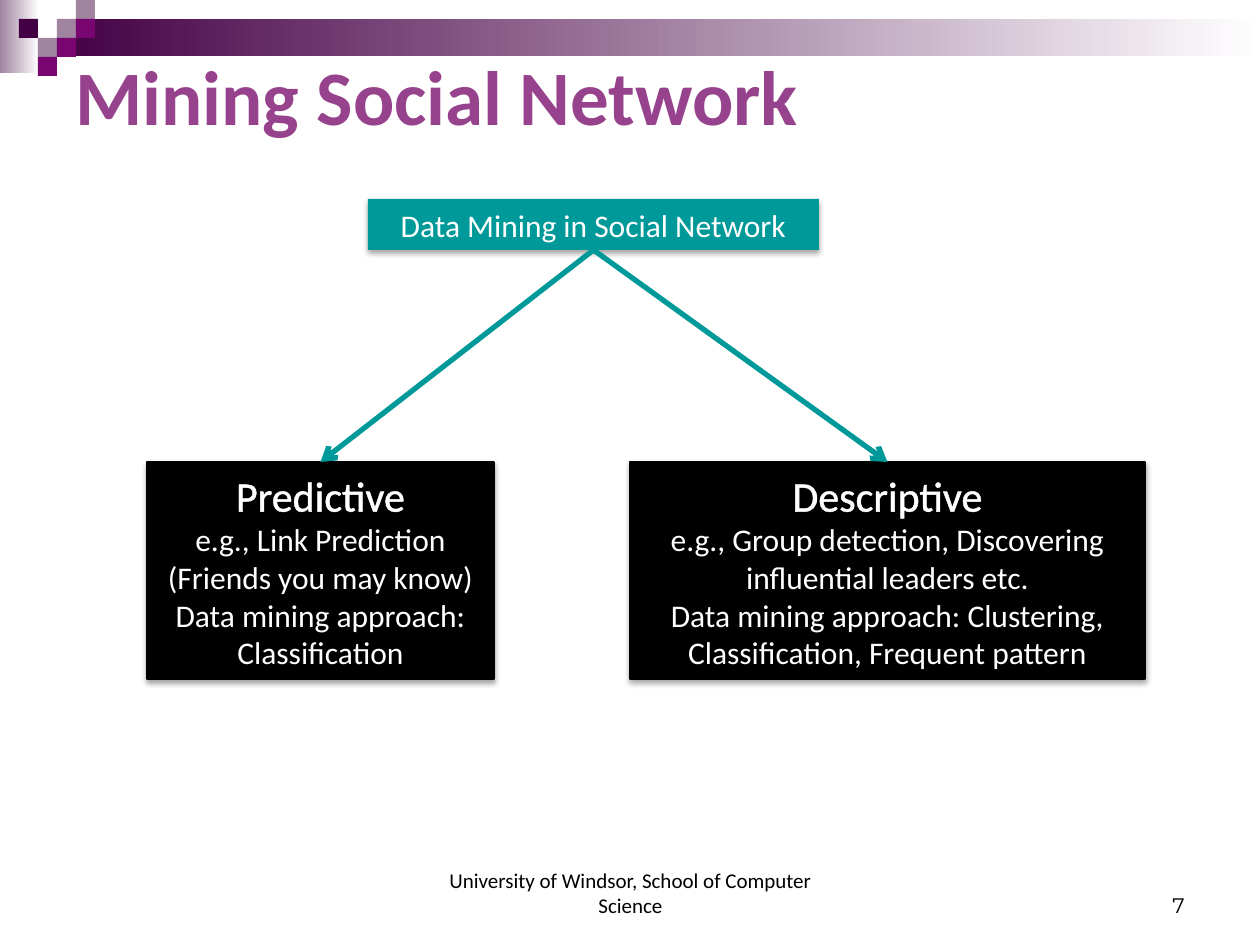
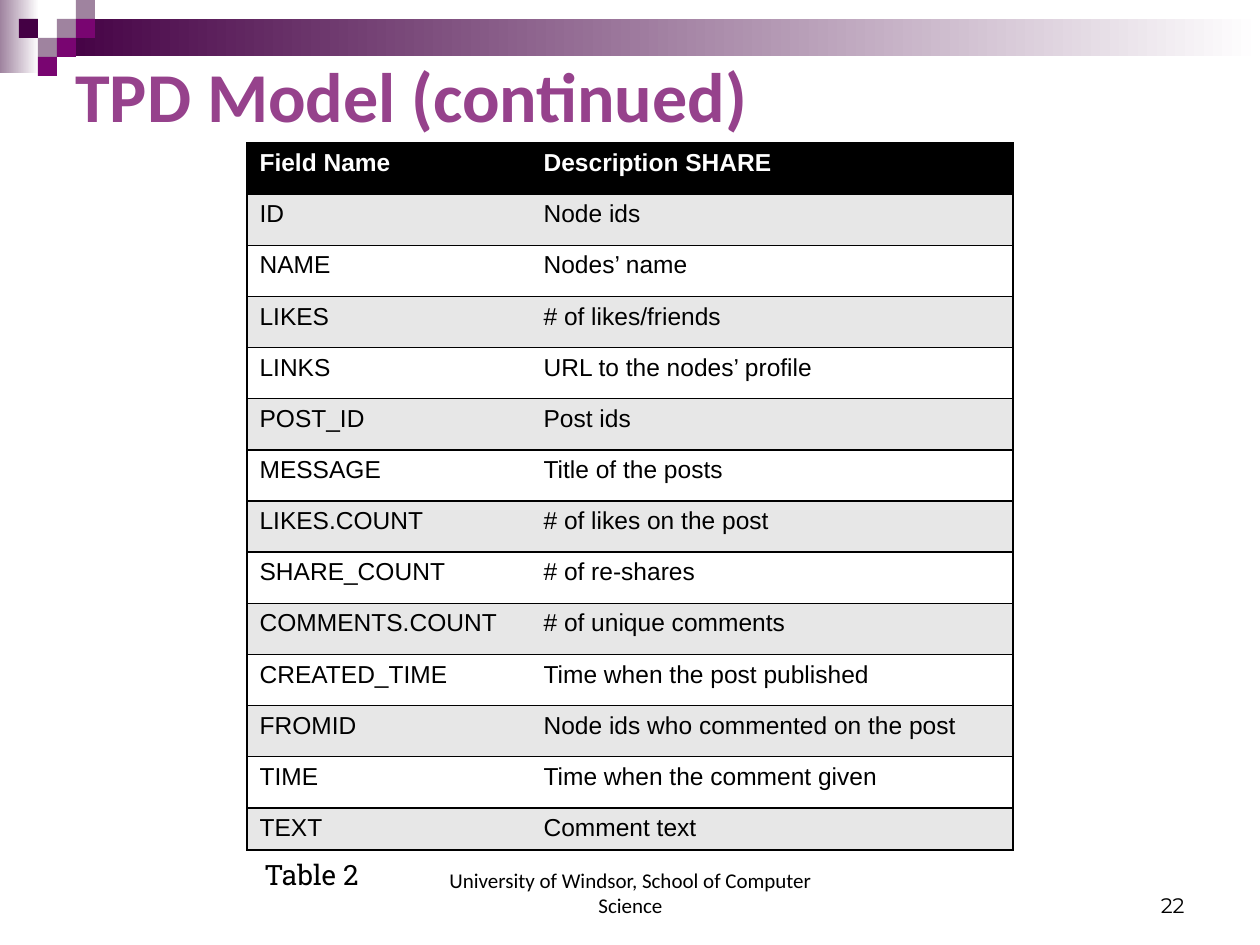
from lxml import etree
from pptx import Presentation
from pptx import util as u
from pptx.dml.color import RGBColor
from pptx.enum import shapes, text
from pptx.oxml import ns

BLACK = RGBColor(0x00, 0x00, 0x00)
WHITE = RGBColor(0xFF, 0xFF, 0xFF)
TEAL = RGBColor(0x00, 0x99, 0x99)
TITLE_PURPLE = RGBColor(0x96, 0x42, 0x8C)
DARK_PURPLE = RGBColor(0x44, 0x00, 0x44)
PURPLE = RGBColor(0x79, 0x05, 0x71)
MAUVE = RGBColor(0x9F, 0x83, 0x9F)
BAND_GREY = RGBColor(0xE7, 0xE7, 0xE7)

BODY_FONT = "Calibri"
TABLE_FONT = "Arial"
NUMBER_FONT = "Montserrat"
CAPTION_FONT = "Roboto Slab"
FOOTER = "University of Windsor, School of Computer Science"
ALIGN = text.PP_ALIGN
ANCHOR = text.MSO_ANCHOR

TILE = 19
TILES = [(3, 1, MAUVE), (4, 0, MAUVE), (4, 1, PURPLE), (2, 2, MAUVE),
         (1, 1, DARK_PURPLE), (3, 2, PURPLE), (2, 3, PURPLE)]

FIELDS = [
    ("Field Name", "Description SHARE"),
    ("ID", "Node ids"),
    ("NAME", "Nodes’ name"),
    ("LIKES", "# of likes/friends"),
    ("LINKS", "URL to the nodes’ profile"),
    ("POST_ID", "Post ids"),
    ("MESSAGE", "Title of the posts"),
    ("LIKES.COUNT", "# of likes on the post"),
    ("SHARE_COUNT", "# of re-shares"),
    ("COMMENTS.COUNT", "# of unique comments"),
    ("CREATED_TIME", "Time when the post published"),
    ("FROMID", "Node ids who commented on the post"),
    ("TIME", "Time when the comment given"),
    ("TEXT", "Comment text"),
]


def px(length):
    return u.Emu(round(length * 914400 / 126))


def add_xml(parent, tag, **attributes):
    return etree.SubElement(parent, ns.qn(tag), attributes)


def add_solid(parent, color):
    fill = add_xml(parent, "a:solidFill")
    return add_xml(fill, "a:srgbClr", val=str(color))


def add_span(para, words, size, color, font=BODY_FONT, bold=False):
    span = para.add_run()
    span.text = words
    span.font.size = u.Pt(size)
    span.font.name = font
    span.font.bold = bold
    span.font.color.rgb = color
    return span


def add_label(page, area, words, size, color=BLACK, font=BODY_FONT, bold=False,
              align=ALIGN.LEFT, anchor=ANCHOR.TOP, wrap=True):
    frame = page.shapes.add_textbox(*map(px, area)).text_frame
    frame.word_wrap = wrap
    frame.vertical_anchor = anchor
    para = frame.paragraphs[0]
    para.alignment = align
    add_span(para, words, size, color, font, bold)


def add_rect(page, area, color, fade=False):
    rect = page.shapes.add_shape(shapes.MSO_SHAPE.RECTANGLE, *map(px, area))
    rect.shadow.inherit = False
    rect.line.fill.background()
    if fade:
        rect.fill.gradient()
        rect.fill.gradient_angle = 0
        for stop, shade in zip(rect.fill.gradient_stops, (color, WHITE)):
            stop.color.rgb = shade
    else:
        rect.fill.solid()
        rect.fill.fore_color.rgb = color
    return rect


def add_page(deck, title, title_size, number):
    page = deck.slides.add_slide(deck.slide_layouts[6])
    add_rect(page, (0, 0, 39, 73), MAUVE, fade=True)
    add_rect(page, (57, 19, 1203, 37), DARK_PURPLE, fade=True)
    for column, row, color in TILES:
        add_rect(page, (column * TILE, row * TILE, TILE, TILE), color)
    add_label(page, (63, 0, 1134, 189), title, title_size, TITLE_PURPLE,
              bold=True, anchor=ANCHOR.MIDDLE)
    add_label(page, (431, 861, 399, 63), FOOTER, 12,
              align=ALIGN.CENTER, anchor=ANCHOR.BOTTOM)
    add_label(page, (903, 861, 294, 63), number, 12, font=NUMBER_FONT,
              align=ALIGN.RIGHT, anchor=ANCHOR.BOTTOM)
    return page


def add_soft_shadow(box):
    effects = box._element.spPr.find(ns.qn("a:effectLst"))
    shadow = add_xml(effects, "a:outerShdw", blurRad="40000", dist="23000",
                     dir="5400000", rotWithShape="0")
    add_xml(add_solid_color(shadow, BLACK), "a:alpha", val="35000")


def add_solid_color(parent, color):
    return add_xml(parent, "a:srgbClr", val=str(color))


def outline_span(span, color):
    line = etree.Element(ns.qn("a:ln"), w="18415")
    add_solid(line, color)
    span.font._element.insert(0, line)


def add_box(page, area, color, lines, heading=None):
    box = add_rect(page, area, color)
    add_soft_shadow(box)
    frame = box.text_frame
    frame.word_wrap = True
    para = frame.paragraphs[0]
    if heading:
        box.line.color.rgb = color
        box.line.width = u.Pt(0.75)
        outline_span(add_span(para, heading, 24, WHITE), WHITE)
        para.alignment = ALIGN.CENTER
        para = frame.add_paragraph()
    for index, words in enumerate(lines):
        if index:
            para = frame.add_paragraph()
        para.alignment = ALIGN.CENTER
        add_span(para, words, 18, WHITE)
    return box


def add_arrow(page, parent, child):
    arrow = page.shapes.add_connector(shapes.MSO_CONNECTOR.STRAIGHT, 0, 0, 0, 0)
    arrow.begin_connect(parent, 2)
    arrow.end_connect(child, 0)
    arrow.line.color.rgb = TEAL
    arrow.line.width = u.Pt(3)
    add_xml(arrow.line._get_or_add_ln(), "a:tailEnd", type="arrow")
    add_xml(arrow._element.spPr, "a:effectLst")


def set_borders(cell, visible):
    properties = cell._tc.get_or_add_tcPr()
    for index, side in enumerate("LRTB"):
        line = etree.Element(ns.qn("a:ln" + side), w="12700")
        if side in visible:
            add_solid(line, BLACK)
        else:
            add_xml(line, "a:noFill")
        properties.insert(index, line)


def add_field_table(page, rows):
    full_rows, last_height = px(665), px(41)
    table = page.shapes.add_table(len(rows), 2, px(247), px(143), px(766),
                                  full_rows + last_height).table
    table.horz_banding = False
    table.columns[0].width, table.columns[1].width = px(284), px(482)
    for row in table.rows:
        row.height = u.Emu(full_rows // (len(rows) - 1))
    table.rows[len(rows) - 1].height = last_height
    for r, row in enumerate(rows):
        header = r == 0
        for c, words in enumerate(row):
            cell = table.cell(r, c)
            cell.fill.solid()
            cell.fill.fore_color.rgb = BLACK if header else (WHITE, BAND_GREY)[r % 2]
            set_borders(cell, ("LTB", "RTB")[c])
            para = cell.text_frame.paragraphs[0]
            para.alignment = ALIGN.JUSTIFY
            add_span(para, words, 14, WHITE if header else BLACK, TABLE_FONT, header)


def add_mining_page(deck):
    page = add_page(deck, "Mining Social Network", 44, "7")
    root = add_box(page, (368, 199, 451, 51), TEAL, ["Data Mining in Social Network"])
    predictive = add_box(page, (147, 462, 347, 217), BLACK, [
        "e.g., Link Prediction (Friends you may know)",
        "Data mining approach: Classification"], "Predictive")
    descriptive = add_box(page, (630, 462, 515, 217), BLACK, [
        "e.g., Group detection, Discovering influential leaders etc.",
        "Data mining approach: Clustering, Classification, Frequent pattern"],
        "Descriptive")
    for child in (predictive, descriptive):
        add_arrow(page, root, child)


def add_model_page(deck):
    page = add_page(deck, "TPD Model (continued)", 40, "22")
    add_field_table(page, FIELDS)
    add_label(page, (252, 851, 126, 47), "Table 2", 16, font=CAPTION_FONT, wrap=False)


def main():
    deck = Presentation()
    deck.slide_width, deck.slide_height = px(1260), px(945)
    add_mining_page(deck)
    add_model_page(deck)
    deck.save("out.pptx")


if __name__ == "__main__":
    main()
